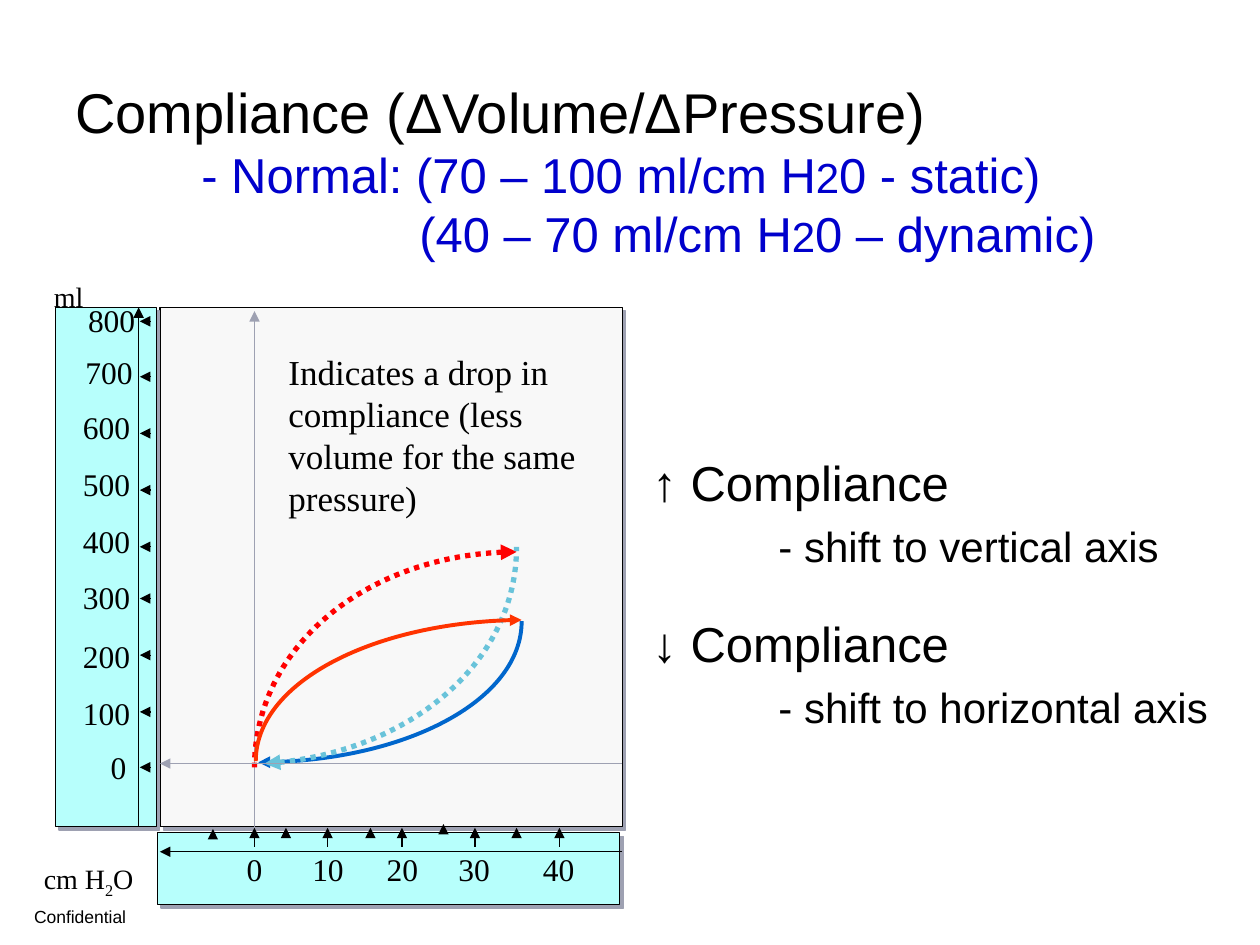
import lxml.etree
import pptx
import pptx.dml.color
import pptx.enum.dml
import pptx.enum.shapes
import pptx.enum.text
import pptx.oxml.ns
import pptx.util

Inches = pptx.util.Inches
Pt = pptx.util.Pt
qn = pptx.oxml.ns.qn
ANCHOR = pptx.enum.text.MSO_ANCHOR
SANS, SERIF = "Arial", "Times New Roman"
BLACK, GREY, AQUA, BLUE = "000000", "9EA1B2", "B7FFFC", "0000CC"


def color(code):
    """Turn a hex string into a colour."""
    return pptx.dml.color.RGBColor.from_string(code)


def add_xml(parent, tag, **attrs):
    """Append a DrawingML element."""
    return lxml.etree.SubElement(parent, qn(tag), attrs)


def add_run(para, text, size, font=SERIF, code=BLACK):
    """Add one formatted run."""
    run = para.add_run()
    run.text = text
    run.font.size = Pt(size)
    run.font.name = font
    run.font.color.rgb = color(code)
    return run


def add_box(slide, x, y, w, h, wrap=True, anchor=ANCHOR.TOP):
    """Add an empty text box and return its frame."""
    frame = slide.shapes.add_textbox(Inches(x), Inches(y), Inches(w), Inches(h)).text_frame
    frame.word_wrap = wrap
    frame.vertical_anchor = anchor
    return frame


def add_label(slide, x, y, w, text, size=18):
    """Add an axis label and return its paragraph."""
    para = add_box(slide, x, y, w, 0.4, wrap=False).paragraphs[0]
    add_run(para, text, size)
    return para


def add_para(frame, runs, font, indent=0, before=0):
    """Fill the first paragraph or add a further one."""
    para = frame.paragraphs[0]
    if para.runs:
        para = frame.add_paragraph()
        para.space_before = Pt(before)
    if indent:
        para._p.get_or_add_pPr().set("marL", str(Inches(indent)))
    for text, size, code in runs:
        add_run(para, text, size, font, code)


def add_panel(slide, x, y, w, h, code):
    """Add a framed panel with a hard shadow."""
    kind = pptx.enum.shapes.MSO_SHAPE.RECTANGLE
    panel = slide.shapes.add_shape(kind, Inches(x), Inches(y), Inches(w), Inches(h))
    panel.fill.solid()
    panel.fill.fore_color.rgb = color(code)
    panel.line.color.rgb = color(BLACK)
    panel.line.width = Pt(0.75)
    panel.shadow.inherit = False
    effects = panel._element.spPr.find(qn("a:effectLst"))
    shade = add_xml(effects, "a:outerShdw", dist=str(Pt(2.8)), dir="2700000", algn="ctr", rotWithShape="0")
    add_xml(shade, "a:srgbClr", val=GREY)


def set_line(shape, code, width, dash=None):
    """Style a line with an arrowhead at its start."""
    shape.line.color.rgb = color(code)
    shape.line.width = Pt(width)
    if dash:
        shape.line.dash_style = dash
    add_xml(shape._element.spPr.find(qn("a:ln")), "a:headEnd", type="triangle")


def add_arrow(slide, x, y, dx, dy, code=BLACK):
    """Add a straight arrow whose head is at x, y."""
    kind = pptx.enum.shapes.MSO_CONNECTOR.STRAIGHT
    arrow = slide.shapes.add_connector(kind, Inches(x), Inches(y), Inches(x + dx), Inches(y + dy))
    set_line(arrow, code, 0.75)
    add_xml(arrow._element.spPr, "a:effectLst")


def add_curve(slide, x, y, points, code, width, dash=None):
    """Add a cubic curve with a head at its first point."""
    start, *rest = [(Inches(x + dx), Inches(y + dy)) for dx, dy in points]
    builder = slide.shapes.build_freeform(*start)
    builder.add_line_segments(rest, close=False)
    curve = builder.convert_to_shape()
    steps = list(curve._element.iter(qn("a:lnTo")))
    parent = steps[0].getparent()
    cubic = add_xml(parent, "a:cubicBezTo")
    for step in steps:
        cubic.append(step[0])
        parent.remove(step)
    curve.fill.background()
    curve.shadow.inherit = False
    set_line(curve, code, width, dash)


def add_title(slide, x, y, w, h):
    """Add the heading and its normal ranges."""
    frame = add_box(slide, x, y, w, h, anchor=ANCHOR.MIDDLE)
    add_para(frame, [("Compliance (ΔVolume/ΔPressure)", 32, BLACK)], SANS)
    for indent, head, tail in (
        (1, "- Normal: (70 – 100 ml/cm H", "0 - static)"),
        (2.73, "(40 – 70 ml/cm H", "0 – dynamic)"),
    ):
        add_para(frame, [(head, 28, BLUE), ("2", 24, BLUE), (tail, 28, BLUE)], SANS, indent)


def add_plot(slide, x, y, w, h):
    """Add the plot area with its loops and note."""
    add_panel(slide, x, y, w, h, "F8F8F8")
    add_arrow(slide, x + 0.75, y + 0.03, 0, h - 0.01, GREY)
    note = add_box(slide, x + 0.92, y + 0.29, 2.51, 1.43)
    add_run(note.paragraphs[0], "Indicates a drop in compliance (less volume for the same pressure)", 20)
    dots = pptx.enum.dml.MSO_LINE.ROUND_DOT
    curves = (
        ([(2.83, 1.94), (1.68, 1.94), (0.75, 2.7), (0.75, 3.65)], "FF0000", 3, dots),
        ([(0.78, 3.61), (1.93, 3.61), (2.87, 3.11), (2.87, 2.49)], "0066CC", 2.25, None),
        ([(0.83, 3.62), (1.96, 3.55), (2.83, 2.8), (2.83, 1.9)], "69C3DA", 3, dots),
        ([(2.87, 2.48), (1.7, 2.49), (0.76, 2.99), (0.76, 3.6)], "FF3300", 2.25, None),
    )
    for curve in curves:
        add_curve(slide, x, y, *curve)
    add_arrow(slide, x, y + 3.62, w, 0, GREY)


def add_volume(slide, x, y, w, h):
    """Add the vertical volume scale."""
    add_label(slide, x - 0.11, y - 0.27, 0.44, "ml", 16)
    add_panel(slide, x, y, w, h, AQUA)
    add_arrow(slide, x + 0.66, y, 0, h)
    lefts = [0.16, 0.14] + [0.12] * 6 + [0.34]
    tops = (-0.1, 0.31, 0.75, 1.2, 1.65, 2.1, 2.57, 3.02, 3.45)
    ticks = (0.11, 0.55, 1, 1.45, 1.9, 2.31, 2.76, 3.21, 3.65)
    for value, left, top, tick in zip(range(800, -1, -100), lefts, tops, ticks):
        add_label(slide, x + left, y + top, 0.58 if value else 0.33, str(value))
        add_arrow(slide, x + 0.67, y + tick, 0.08, 0)


def add_press(slide, x, y, w, h):
    """Add the horizontal pressure scale."""
    add_panel(slide, x, y, w, h, AQUA)
    add_arrow(slide, x + 0.02, y + 0.15, w, 0)
    lefts = (0.61, 1.13, 1.72, 2.29, 2.96)
    ticks = (0.77, 1.35, 1.94, 2.52, 3.19)
    minors = ((0.44, -0.03), (1.02, -0.04), (1.69, -0.04), (2.27, -0.07), (2.85, -0.04))
    for value, left, tick, (minor, rise) in zip(range(0, 41, 10), lefts, ticks, minors):
        add_label(slide, x + left, y + 0.09, 0.45 if value else 0.33, str(value))
        add_arrow(slide, x + tick, y - 0.04, 0, 0.15)
        add_arrow(slide, x + minor, y + rise, 0, 0.07)
    unit = add_label(slide, x - 1, y + 0.18, 0.93, "cm H", 16)
    add_run(unit, "2", 16)._r.get_or_add_rPr().set("baseline", "-25000")
    add_run(unit, "O", 16)


def add_shifts(slide, x, y, w, h):
    """Add the text on how the loop shifts."""
    frame = add_box(slide, x, y, w, h)
    for mark, axis in (("↑", "vertical"), ("↓", "horizontal")):
        add_para(frame, [(f"{mark} Compliance", 28, BLACK)], SANS, before=24)
        add_para(frame, [(f"- shift to {axis} axis", 24, BLACK)], SANS, indent=1, before=5.6)


def add_footer(slide, x, y, w, h):
    """Add the footer text."""
    frame = add_box(slide, x, y, w, h, anchor=ANCHOR.BOTTOM)
    frame.margin_left = frame.margin_right = frame.margin_top = frame.margin_bottom = 0
    add_run(frame.paragraphs[0], "Confidential", 10, SANS)


def main():
    """Build and save the slide."""
    deck = pptx.Presentation()
    deck.slide_width, deck.slide_height = Inches(10), Inches(7.5)
    slide = deck.slides.add_slide(deck.slide_layouts[6])
    add_footer(slide, 0.27, 7.19, 2.01, 0.17)
    add_plot(slide, 1.27, 2.44, 3.67, 4.12)
    add_volume(slide, 0.44, 2.44, 0.8, 4.12)
    add_press(slide, 1.25, 6.61, 3.67, 0.57)
    add_shifts(slide, 5.08, 3.54, 4.75, 2.3)
    add_title(slide, 0.5, 0.53, 9, 1.64)
    deck.save("out.pptx")


if __name__ == "__main__":
    main()
